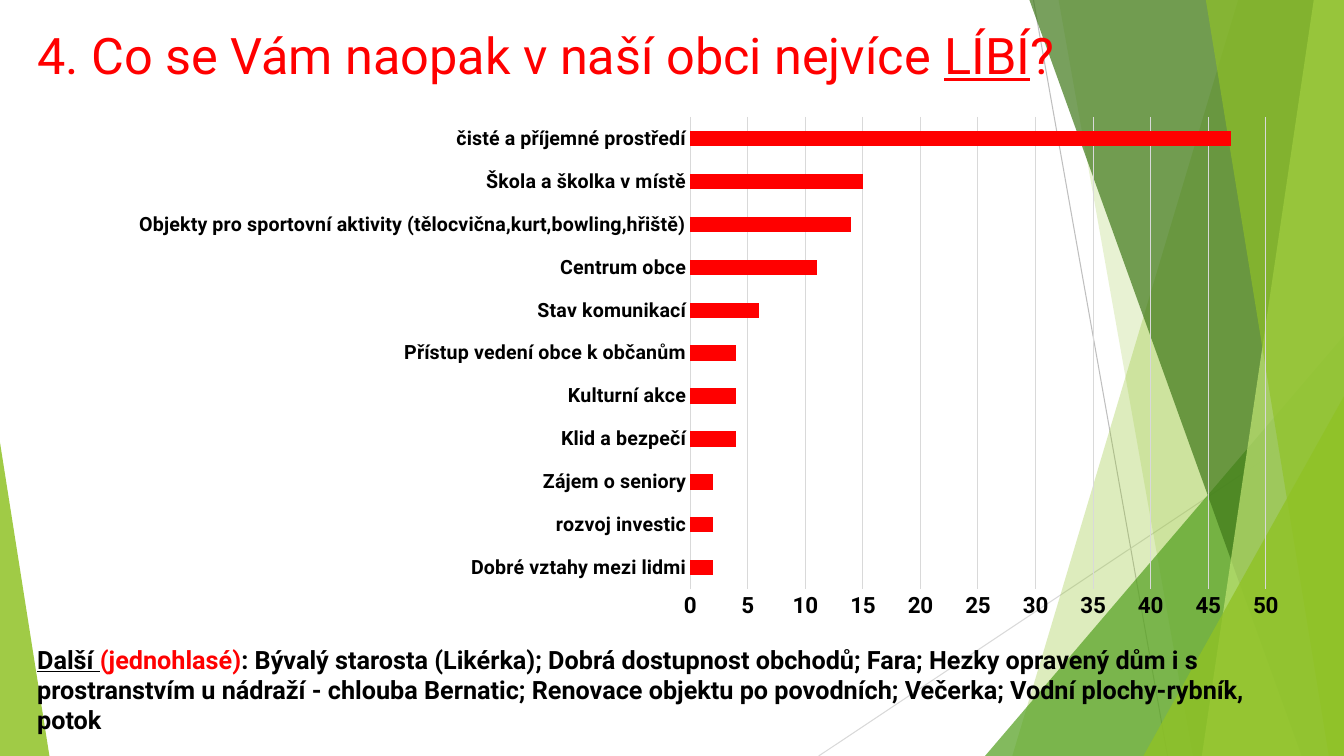
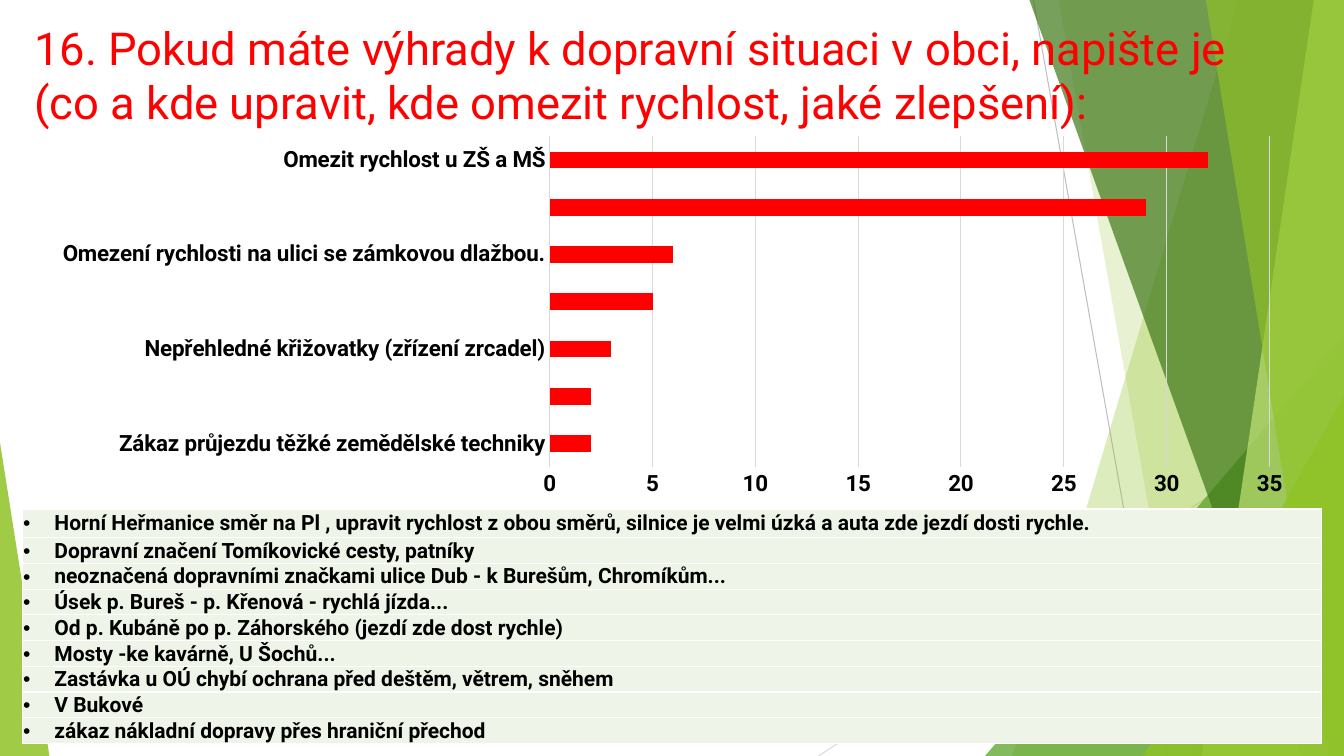
from lxml import etree
from pptx import Presentation
from pptx.chart.data import CategoryChartData
from pptx.dml.color import RGBColor
from pptx.enum.chart import XL_CHART_TYPE, XL_TICK_MARK
from pptx.enum.shapes import MSO_CONNECTOR, MSO_SHAPE
from pptx.enum.text import MSO_ANCHOR, MSO_AUTO_SIZE, PP_ALIGN
from pptx.oxml.ns import qn
from pptx.util import Inches, Pt

BAR_CLUSTERED = XL_CHART_TYPE.BAR_CLUSTERED
NO_TICK = XL_TICK_MARK.NONE
STRAIGHT = MSO_CONNECTOR.STRAIGHT
TRIANGLE = MSO_SHAPE.ISOSCELES_TRIANGLE
TOP, BOTTOM = MSO_ANCHOR.TOP, MSO_ANCHOR.BOTTOM
NO_AUTOFIT = MSO_AUTO_SIZE.NONE
LEFT = PP_ALIGN.LEFT

RED = RGBColor(0xFF, 0x00, 0x00)
BLACK = RGBColor(0x00, 0x00, 0x00)
WHITE = RGBColor(0xFF, 0xFF, 0xFF)
GRID = RGBColor(0xD9, 0xD9, 0xD9)
GRAY = RGBColor(0xBF, 0xBF, 0xBF)
LIME = RGBColor(0x90, 0xC2, 0x26)
GREEN = RGBColor(0x54, 0xA0, 0x21)
DARK_GREEN = RGBColor(0x3F, 0x78, 0x19)
PALE_LIME = RGBColor(0xC0, 0xE4, 0x74)
ROW_FILL = RGBColor(0xEE, 0xF4, 0xE8)
FONT = "Roboto"
WIDTH, HEIGHT = 13.33, 7.5

RAYS = [
    ((10.25, 0), (11.58, HEIGHT), GRAY),
    ((WIDTH, 4.03), (8.12, HEIGHT), GRID),
]
FACETS = [
    ("band", (12.28, 10.04), LIME, 30),
    ("band", (10.5, 11.83), LIME, 20),
    ("triangle", (9.77, 3.33, 3.56, 4.17, 1), GREEN, 72),
    ("band", (10.21, 12.91), DARK_GREEN, 70),
    ("band", (13.03, 11.92), PALE_LIME, 70),
    ("band", (11.96, 13.18), LIME, 65),
    ("triangle", (11.34, 3.93, 1.99, 3.57, 1), LIME, 80),
    ("triangle", (0, 4.39, 0.49, 3.11, 0), LIME, 85),
]

LIKES_TITLE = [
    ("4. Co se Vám naopak v naší obci nejvíce ", {}),
    ("LÍBÍ", {"underline": True}),
    ("?", {}),
]
LIKES = [
    ("Dobré vztahy mezi lidmi", 2),
    ("rozvoj investic", 2),
    ("Zájem o seniory", 2),
    ("Klid a bezpečí", 4),
    ("Kulturní akce", 4),
    ("Přístup vedení obce k občanům", 4),
    ("Stav komunikací", 6),
    ("Centrum obce", 11),
    ("Objekty pro sportovní aktivity (tělocvična,kurt,bowling,hřiště)", 14),
    ("Škola a školka v místě", 15),
    ("čisté a příjemné prostředí", 47),
]
OTHER_LIKES = [
    ("Další ", {"underline": True}),
    ("(jednohlasé)", {"color": RED}),
    (": Bývalý starosta (Likérka); Dobrá dostupnost obchodů; Fara; Hezky opravený dům i s "
     "prostranstvím u nádraží - chlouba Bernatic; Renovace objektu po povodních; Večerka; "
     "Vodní plochy-rybník, potok", {}),
]
TRAFFIC_TITLE = [
    ("16. Pokud máte výhrady k dopravní situaci v obci, napište je "
     "(co a kde upravit, kde omezit rychlost, jaké zlepšení):", {}),
]
TRAFFIC = [
    ("Zákaz průjezdu těžké zemědělské techniky", 2),
    ("", 2),
    ("Nepřehledné křižovatky (zřízení zrcadel)", 3),
    ("", 5),
    ("Omezení rychlosti na ulici se zámkovou dlažbou.", 6),
    ("", 29),
    ("Omezit rychlost u ZŠ a MŠ", 32),
]
REMARKS = [
    "Horní Heřmanice směr na Pl , upravit rychlost z obou směrů, silnice je velmi úzká "
    "a auta zde jezdí dosti rychle.",
    "Dopravní značení Tomíkovické cesty, patníky",
    "neoznačená dopravními značkami ulice Dub - k Burešům, Chromíkům...",
    "Úsek p. Bureš - p. Křenová - rychlá jízda...",
    "Od p. Kubáně po p. Záhorského (jezdí zde dost rychle)",
    "Mosty -ke kavárně, U Šochů...",
    "Zastávka u OÚ chybí ochrana před deštěm, větrem, sněhem",
    "V Bukové",
    "zákaz nákladní dopravy přes hraniční přechod",
]


def inches(values):
    return [Inches(value) for value in values]


def style_font(font, size, color=BLACK, bold=False, underline=None):
    font.name, font.size, font.bold = FONT, Pt(size), bold
    font.color.rgb = color
    font.underline = underline


def write(frame, runs, **style):
    frame.word_wrap = True
    para = frame.paragraphs[0]
    para.alignment = LEFT
    for text, changes in runs:
        span = para.add_run()
        span.text = text
        style_font(span.font, **{**style, **changes})
    return para


def fill_facet(shape, color, opacity):
    shape.shadow.inherit = False
    shape.fill.solid()
    shape.fill.fore_color.rgb = color
    shape.line.fill.background()
    tint = shape.element.spPr.find(qn("a:solidFill"))[0]
    etree.SubElement(tint, qn("a:alpha"), val=str(opacity * 1000))


def decorate(layout, page):
    group = page.shapes.add_group_shape()
    for start, end, color in RAYS:
        ray = group.shapes.add_connector(STRAIGHT, *inches(start + end))
        ray.line.color.rgb = color
        ray.line.width = Pt(0.75)
        etree.SubElement(ray.element.spPr, qn("a:effectLst"))
    for kind, geometry, color, opacity in FACETS:
        if kind == "band":
            top_x, bottom_x = geometry
            outline = group.shapes.build_freeform(Inches(top_x), 0)
            corners = [(WIDTH, 0), (WIDTH, HEIGHT), (bottom_x, HEIGHT)]
            outline.add_line_segments([inches(corner) for corner in corners], close=True)
            facet = outline.convert_to_shape()
        else:
            *area, apex = geometry
            facet = group.shapes.add_shape(TRIANGLE, *inches(area))
            facet.adjustments[0] = apex
        fill_facet(facet, color, opacity)
    for number, node in enumerate(group.element.iter(qn("p:cNvPr")), 101):
        node.set("id", str(number))
    layout.shapes.element.insert(2, group.element)


def set_title(page, runs, area, size):
    title = page.shapes.title
    title.left, title.top, title.width, title.height = inches(area)
    frame = title.text_frame
    frame.auto_size = NO_AUTOFIT
    frame.vertical_anchor = TOP
    write(frame, runs, size=size, color=RED)


def set_plot_area(chart, bounds):
    plot_area = chart.element.find(".//" + qn("c:plotArea"))
    layout = plot_area.find(qn("c:layout"))
    if layout is None:
        layout = etree.Element(qn("c:layout"))
        plot_area.insert(0, layout)
    manual = etree.SubElement(layout, qn("c:manualLayout"))
    settings = [("layoutTarget", "inner"), ("xMode", "edge"), ("yMode", "edge")]
    for tag, value in settings + list(zip("xywh", bounds)):
        etree.SubElement(manual, qn("c:" + tag), val=str(value))


def add_bars(page, votes, area, label_size, maximum, bounds=None):
    data = CategoryChartData()
    data.categories = [label for label, count in votes]
    data.add_series("Series 1", [count for label, count in votes])
    chart = page.shapes.add_chart(BAR_CLUSTERED, *inches(area), data).chart
    chart.has_title = chart.has_legend = False
    style_font(chart.font, 10)
    plot = chart.plots[0]
    plot.gap_width = 182
    plot.vary_by_categories = False
    bar_fill = plot.series[0].format.fill
    bar_fill.solid()
    bar_fill.fore_color.rgb = RED
    labels, values = chart.category_axis, chart.value_axis
    for axis, size in ((labels, label_size), (values, 16)):
        axis.major_tick_mark = axis.minor_tick_mark = NO_TICK
        style_font(axis.tick_labels.font, size, bold=True)
    labels.has_major_gridlines = False
    values.has_major_gridlines = True
    values.minimum_scale, values.maximum_scale, values.major_unit = 0, maximum, 5
    values.format.line.fill.background()
    for line in (labels.format.line, values.major_gridlines.format.line):
        line.color.rgb = GRID
        line.width = Pt(0.75)
    if bounds:
        set_plot_area(chart, bounds)


def add_borders(cell):
    properties = cell._tc.get_or_add_tcPr()
    for side in "LRTB":
        edge = etree.SubElement(properties, qn("a:ln" + side), w=str(Pt(1)))
        solid = etree.SubElement(edge, qn("a:solidFill"))
        etree.SubElement(solid, qn("a:srgbClr"), val=str(WHITE))


def add_remarks(page, area):
    table = page.shapes.add_table(len(REMARKS), 1, *inches(area)).table
    table.first_row = table.horz_banding = False
    for index, remark in enumerate(REMARKS):
        first = index == 0
        table.rows[index].height = Inches(0.25 if first else 0.23)
        cell = table.cell(index, 0)
        add_borders(cell)
        cell.fill.solid()
        cell.fill.fore_color.rgb = ROW_FILL
        cell.vertical_anchor = BOTTOM
        cell.margin_left = cell.margin_right = Inches(0.01)
        cell.margin_top = Inches(0.02 if first else 0.01)
        cell.margin_bottom = Inches(0.02 if first else 0)
        para = write(cell.text_frame, [(remark, {})], size=15, bold=True)
        properties = para._p.get_or_add_pPr()
        properties.set("marL", str(Inches(0.31)))
        properties.set("indent", str(-Inches(0.31)))
        etree.SubElement(properties, qn("a:buFont"), typeface="Arial")
        etree.SubElement(properties, qn("a:buChar"), char="•")


def main():
    deck = Presentation()
    deck.slide_width, deck.slide_height = inches((WIDTH, HEIGHT))
    layout = deck.slide_layouts[5]

    page = deck.slides.add_slide(layout)
    decorate(layout, page)
    set_title(page, LIKES_TITLE, (0.27, 0.19, 10.51, 1.42), 36)
    add_bars(page, LIKES, (-0.58, 1, 13.43, 5.35), 14, 50, (0.553, 0.03, 0.425, 0.876))
    box = page.shapes.add_textbox(*inches((0.27, 6.34, 12.59, 1.01)))
    write(box.text_frame, OTHER_LIKES, size=18, bold=True)

    page = deck.slides.add_slide(layout)
    set_title(page, TRAFFIC_TITLE, (0.24, 0.15, 12.73, 1.44), 32.4)
    add_bars(page, TRAFFIC, (0.37, 1.28, 12.6, 3.72), 16, 35)
    add_remarks(page, (0.22, 5.05, 12.89, 2.09))

    deck.save("out.pptx")


if __name__ == "__main__":
    main()
